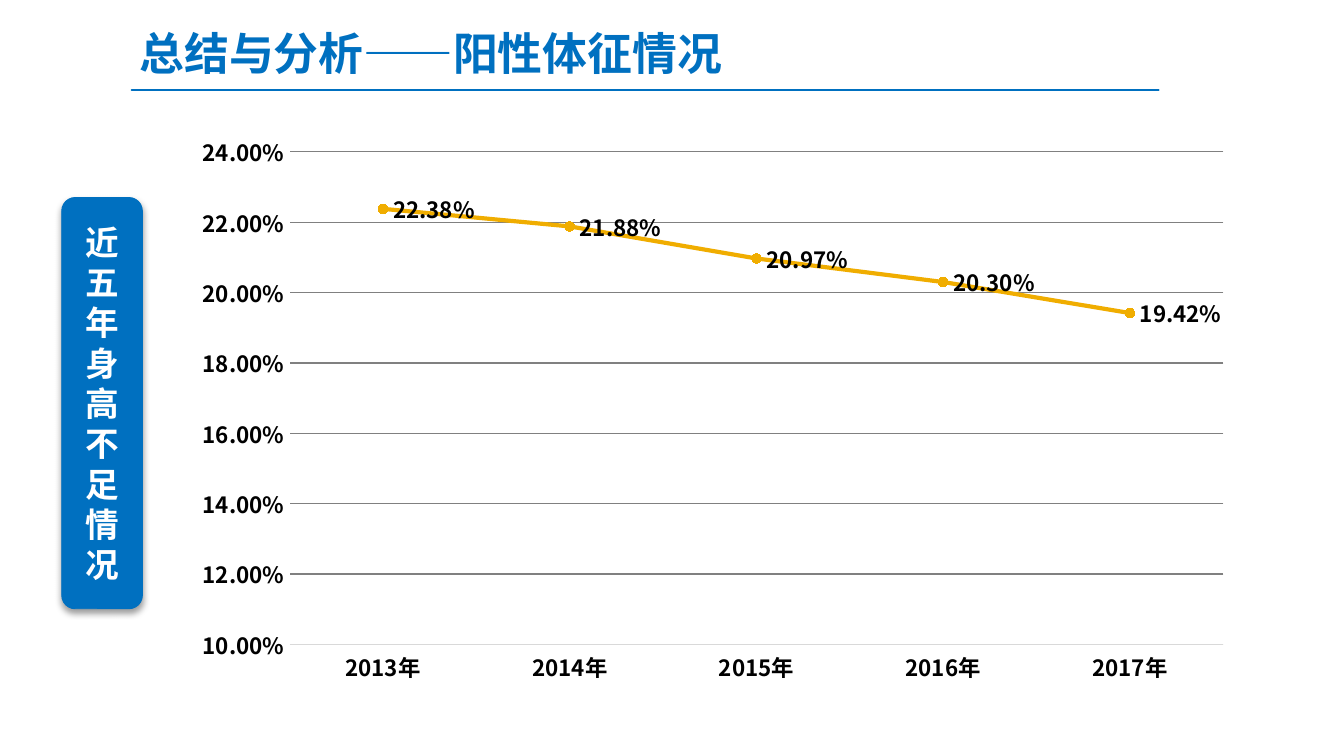
from lxml import etree
from pptx import Presentation
from pptx.chart.data import CategoryChartData
from pptx.dml.color import RGBColor
from pptx.enum.chart import XL_CHART_TYPE, XL_LABEL_POSITION, XL_MARKER_STYLE, XL_TICK_MARK
from pptx.enum.shapes import MSO_CONNECTOR, MSO_SHAPE
from pptx.enum.text import MSO_ANCHOR, MSO_AUTO_SIZE, PP_ALIGN
from pptx.oxml import parse_xml
from pptx.oxml.ns import nsdecls, qn
from pptx.util import Inches, Pt

LINE_MARKERS = XL_CHART_TYPE.LINE_MARKERS
LABEL_RIGHT = XL_LABEL_POSITION.RIGHT
CIRCLE = XL_MARKER_STYLE.CIRCLE
NO_TICK = XL_TICK_MARK.NONE
STRAIGHT = MSO_CONNECTOR.STRAIGHT
ROUNDED = MSO_SHAPE.ROUNDED_RECTANGLE
MIDDLE = MSO_ANCHOR.MIDDLE
GROW = MSO_AUTO_SIZE.SHAPE_TO_FIT_TEXT
CENTER = PP_ALIGN.CENTER

TITLE = "总结与分析——阳性体征情况"
SIDE_LABEL = "近五年身高不足情况"
RATES = {
    "2013年": 0.2238,
    "2014年": 0.2188,
    "2015年": 0.2097,
    "2016年": 0.2030,
    "2017年": 0.1942,
}
PERCENT = "0.00%"
FONT = "Noto Sans CJK SC"
COLORS = {
    "blue": "0070C0",
    "gold": "F0AD00",
    "grid": "808080",
    "axis": "D9D9D9",
    "white": "FFFFFF",
    "black": "000000",
}


def color(name):
    return RGBColor.from_string(COLORS[name])


def style_font(font, size, color_name):
    font.name = FONT
    font.size = Pt(size)
    font.bold = True
    font.color.rgb = color(color_name)


def style_line(line, color_name, width):
    line.color.rgb = color(color_name)
    line.width = Pt(width)


def fill_solid(fill, color_name):
    fill.solid()
    fill.fore_color.rgb = color(color_name)


def write_text(frame, text, size, color_name):
    frame.text = text
    run = frame.paragraphs[0].runs[0]
    style_font(run.font, size, color_name)
    east_asian = etree.SubElement(run.font._element, qn("a:ea"))
    east_asian.set("typeface", FONT)


def add_title(slide):
    rule = slide.shapes.add_connector(
        STRAIGHT, Inches(0.98), Inches(0.67), Inches(8.62), Inches(0.67))
    style_line(rule.line, "blue", 1.25)
    rule._element.spPr.find(qn("a:ln")).set("cap", "rnd")
    etree.SubElement(rule._element.spPr, qn("a:effectLst"))

    title = slide.shapes.add_textbox(
        Inches(0.94), Inches(0.06), Inches(4.63), Inches(0.59))
    frame = title.text_frame
    frame.word_wrap = False
    frame.auto_size = GROW
    write_text(frame, TITLE, 24, "blue")
    frame.paragraphs[0].line_spacing = 1.2


def add_side_label(slide):
    """Narrow box that wraps its text to one character a line."""
    label = slide.shapes.add_shape(
        ROUNDED, Inches(0.46), Inches(1.47), Inches(0.6), Inches(3.06))
    fill_solid(label.fill, "blue")
    style_line(label.line, "blue", 0.5)
    label.shadow.inherit = False
    label._element.spPr.find(qn("a:effectLst")).append(parse_xml(
        f'<a:outerShdw {nsdecls("a")} blurRad="{Pt(3.5)}" dist="{Pt(2)}" '
        f'dir="5400000" rotWithShape="0"><a:srgbClr val="{COLORS["black"]}">'
        '<a:alpha val="38000"/></a:srgbClr></a:outerShdw>'))
    frame = label.text_frame
    frame.word_wrap = True
    frame.vertical_anchor = MIDDLE
    write_text(frame, SIDE_LABEL, 18, "white")
    frame.paragraphs[0].alignment = CENTER


def add_rate_chart(slide):
    data = CategoryChartData(number_format=PERCENT)
    data.categories = list(RATES)
    data.add_series("Series 1", list(RATES.values()))
    chart = slide.shapes.add_chart(
        LINE_MARKERS, Inches(1.35), Inches(0.92), Inches(7.91), Inches(4.25), data).chart
    chart.has_legend = False
    chart.has_title = False
    style_font(chart.font, 12, "black")

    years, rates = chart.category_axis, chart.value_axis
    for axis in (years, rates):
        axis.major_tick_mark = axis.minor_tick_mark = NO_TICK
        style_font(axis.tick_labels.font, 12, "black")
    style_line(years.format.line, "axis", 0.75)
    rates.format.line.fill.background()
    rates.minimum_scale = 0.10
    rates.tick_labels.number_format = PERCENT
    rates.tick_labels.number_format_is_linked = False
    style_line(rates.major_gridlines.format.line, "grid", 0.75)

    plot = chart.plots[0]
    plot.vary_by_categories = False
    series = plot.series[0]
    series.smooth = False
    style_line(series.format.line, "gold", 2.25)
    series.marker.style = CIRCLE
    series.marker.size = 5
    fill_solid(series.marker.format.fill, "gold")
    style_line(series.marker.format.line, "gold", 0.75)

    labels = series.data_labels
    labels.show_value = True
    labels.position = LABEL_RIGHT
    labels.number_format = PERCENT
    labels.number_format_is_linked = False
    style_font(labels.font, 12, "black")


def main():
    deck = Presentation()
    deck.slide_width = Inches(10)
    deck.slide_height = deck.slide_width * 9 // 16
    slide = deck.slides.add_slide(deck.slide_layouts[6])
    add_title(slide)
    add_side_label(slide)
    add_rate_chart(slide)
    deck.save("out.pptx")


if __name__ == "__main__":
    main()
